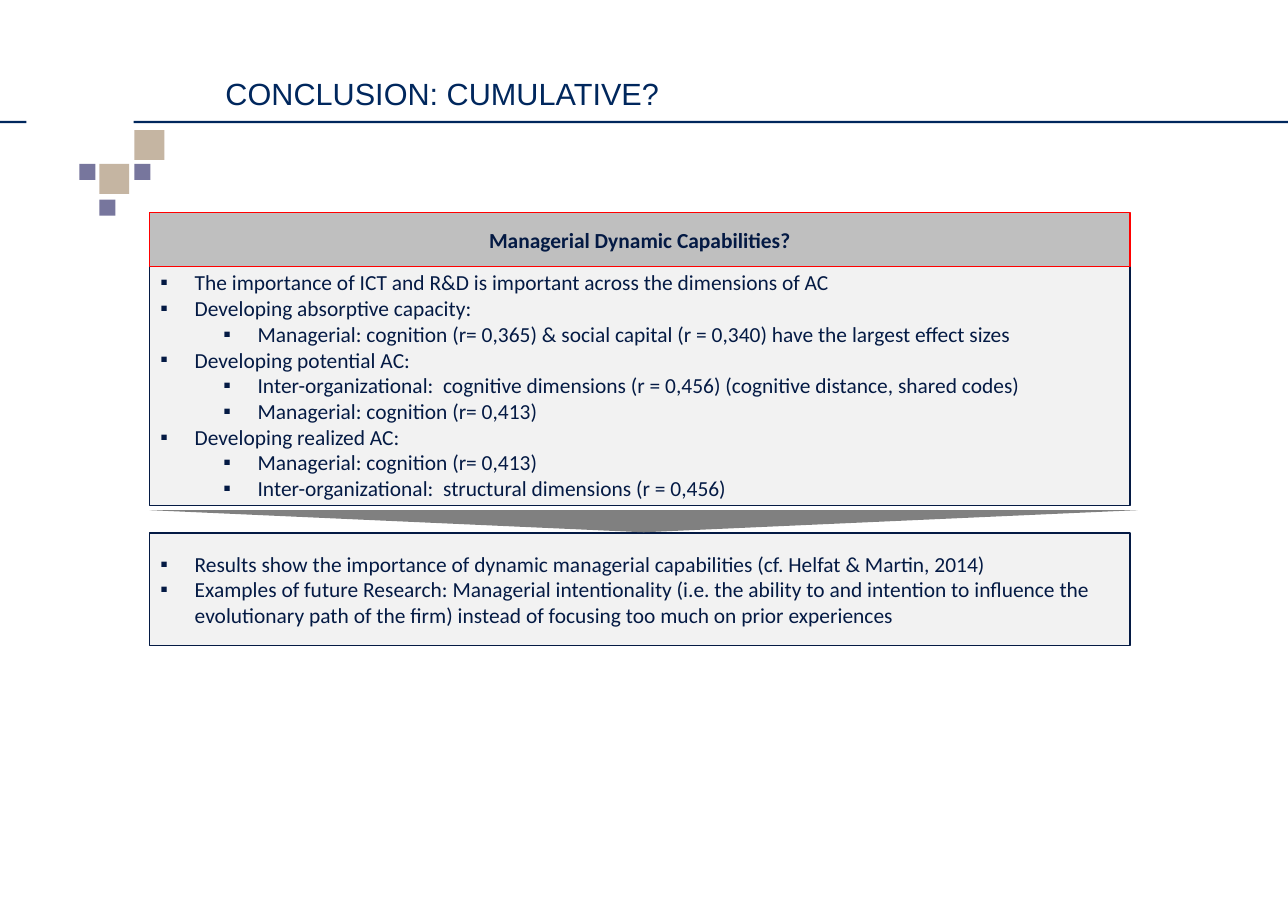
"""Build the conclusion slide on managerial dynamic capabilities."""
from lxml.etree import SubElement
from pptx import Presentation
from pptx.dml.color import RGBColor
from pptx.enum.shapes import MSO_SHAPE
from pptx.enum.text import MSO_ANCHOR, PP_ALIGN
from pptx.oxml.ns import qn
from pptx.util import Cm, Pt

NAVY, INK, SAND, MAUVE, PALE = "00275D", "041A44", "C5B5A2", "77769D", "F2F2F2"
LEFT, WIDTH = 3.45, 22.61


def paint(target, color):
    target.solid()
    target.fore_color.rgb = RGBColor.from_string(color)


def draw(kind, left, top, width, height, fill, line=None):
    shape = slide.shapes.add_shape(kind, Cm(left), Cm(top), Cm(width), Cm(height))
    shape.shadow.inherit = False
    paint(shape.fill, fill)
    if line:
        paint(shape.line.fill, line)
        shape.line.width = Pt(1)
    else:
        shape.line.fill.background()
    return shape


deck = Presentation()
deck.slide_width, deck.slide_height = Cm(29.7), Cm(21)
slide = deck.slides.add_slide(deck.slide_layouts[6])

decor = [
    (1.83, 3.78, 0.37, 0.37, MAUVE),
    (3.1, 3, 0.69, 0.69, SAND),
    (2.29, 3.78, 0.69, 0.69, SAND),
    (2.29, 4.6, 0.37, 0.37, MAUVE),
    (3.1, 3.78, 0.37, 0.37, MAUVE),
    (0, 2.79, 0.61, 0.05, NAVY),
    (3.08, 2.79, 26.62, 0.05, NAVY),
]
for left, top, width, height, color in decor:
    draw(MSO_SHAPE.RECTANGLE, left, top, width, height, color)

title = slide.shapes.add_textbox(Cm(5.2), Cm(0.79), Cm(23.15), Cm(1.78))
frame = title.text_frame
frame.word_wrap = True
frame.vertical_anchor = MSO_ANCHOR.BOTTOM
frame.margin_left = frame.margin_right = frame.margin_top = frame.margin_bottom = 0
frame.text = "CONCLUSION: CUMULATIVE?"
font = frame.paragraphs[0].runs[0].font
font.name, font.size = "Arial", Pt(20)
paint(font.fill, NAVY)

findings = [
    (0, "The importance of ICT and R&D is important across the dimensions of AC"),
    (0, "Developing absorptive capacity:"),
    (1, "Managerial: cognition (r= 0,365) & social capital (r = 0,340) have the largest effect sizes"),
    (0, "Developing potential AC:"),
    (1, "Inter-organizational:  cognitive dimensions (r = 0,456) (cognitive distance, shared codes)"),
    (1, "Managerial: cognition (r= 0,413)"),
    (0, "Developing realized AC:"),
    (1, "Managerial: cognition (r= 0,413)"),
    (1, "Inter-organizational:  structural dimensions (r = 0,456)"),
]
outlook = [
    (0, "Results show the importance of dynamic managerial capabilities (cf. Helfat & Martin, 2014)"),
    (0, "Examples of future Research: Managerial intentionality (i.e. the ability to and intention "
        "to influence the evolutionary path of the firm) instead of focusing too much on prior experiences"),
]
header = [(None, "Managerial Dynamic Capabilities?")]
panels = [
    (6.1, 5.56, PALE, INK, findings),
    (4.9, 1.24, "BFBFBF", "FF0000", header),
    (12.29, 2.59, PALE, INK, outlook),
]
for top, height, fill, line, items in panels:
    panel = draw(MSO_SHAPE.RECTANGLE, LEFT, top, WIDTH, height, fill, line)
    frame = panel.text_frame
    frame.word_wrap = True
    frame.vertical_anchor = MSO_ANCHOR.MIDDLE
    frame.text = "\n".join(text for level, text in items)
    for para, (level, text) in zip(frame.paragraphs, items):
        if level is None:
            para.alignment = PP_ALIGN.CENTER
        else:
            para.alignment = PP_ALIGN.LEFT
            para.level = level
            props = para._p.get_or_add_pPr()
            props.set("marL", str(Cm(0.79 + 1.45 * level)))
            props.set("indent", str(Cm(-0.79)))
            SubElement(props, qn("a:buFont"), typeface="Arial")
            SubElement(props, qn("a:buChar"), char="▪")
        font = para.runs[0].font
        font.name, font.size, font.bold = "Calibri", Pt(14), level is None
        paint(font.fill, INK)

wedge = draw(MSO_SHAPE.ISOSCELES_TRIANGLE, LEFT, 11.76, 22.78, 0.51, "808080")
wedge.rotation = 180

deck.save("out.pptx")
